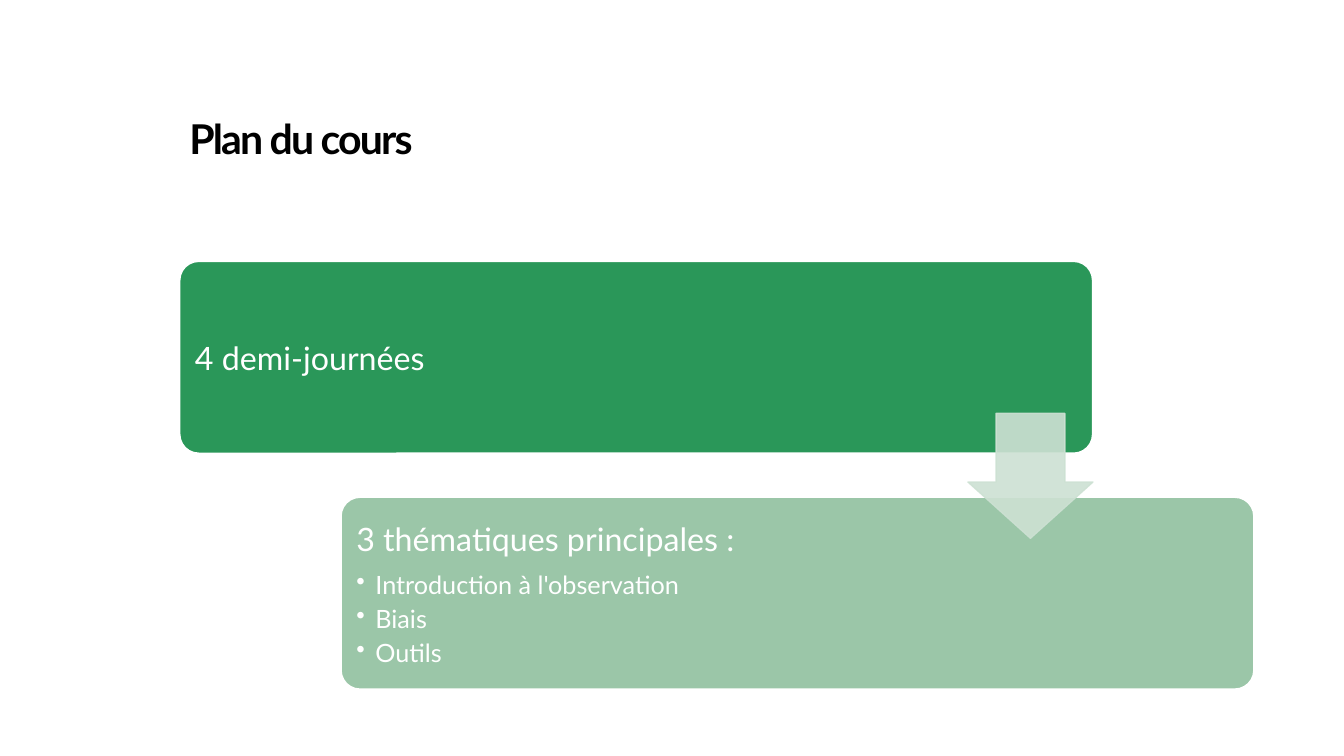
from dataclasses import dataclass

from lxml.etree import SubElement
from pptx import Presentation
from pptx.dml.color import RGBColor
from pptx.enum.shapes import MSO_SHAPE
from pptx.enum.text import MSO_ANCHOR, PP_ALIGN
from pptx.oxml.ns import qn
from pptx.util import Emu, Inches, Pt


@dataclass(frozen=True)
class Theme:
    font: str = "Lato"
    ink: str = "000000"
    paper: str = "FFFFFF"
    steps: tuple = ("2A9759", "9BC6A8")
    arrow: str = "CDE1D3"
    title_size: float = 29.3
    heading_size: float = 23
    topic_size: float = 18


class CourseSlide:
    """Draws course plan elements placed in percent of the slide's size."""

    def __init__(self, deck, theme):
        self.deck = deck
        self.theme = theme
        self.slide = deck.slides.add_slide(deck.slide_layouts[6])

    def area(self, left, top, width, height):
        across, down = self.deck.slide_width, self.deck.slide_height
        return [Emu(round(share * side / 100)) for share, side in
                ((left, across), (top, down), (width, across), (height, down))]

    def apply(self, target, values):
        for name, value in values.items():
            setattr(target, name, value)

    def add_words(self, paragraph, words, size, color, after=0, bold=False):
        self.apply(paragraph, {"alignment": PP_ALIGN.LEFT, "space_after": Pt(after)})
        run = paragraph.add_run()
        run.text = words
        self.apply(run.font, {"name": self.theme.font, "size": Pt(size), "bold": bold})
        run.font.color.rgb = RGBColor.from_string(color)
        return run

    def bullet(self, paragraph, indent):
        properties = paragraph._p.get_or_add_pPr()
        properties.set("marL", str(indent))
        properties.set("indent", str(-indent))
        SubElement(properties, qn("a:buChar"), char="•")

    def title(self, words, area):
        frame = self.slide.shapes.add_textbox(*self.area(*area)).text_frame
        frame.word_wrap = True
        run = self.add_words(frame.paragraphs[0], words, self.theme.title_size,
                             self.theme.ink, bold=True)
        run.font._element.set("spc", "-130")

    def block(self, kind, area, adjustments, fill, outline, weight):
        shape = self.slide.shapes.add_shape(kind, *self.area(*area))
        shape.shadow.inherit = False
        for place, value in enumerate(adjustments):
            shape.adjustments[place] = value
        shape.fill.solid()
        shape.fill.fore_color.rgb = RGBColor.from_string(fill)
        shape.line.color.rgb = RGBColor.from_string(outline)
        shape.line.width = Pt(weight)
        return shape

    def step(self, heading, topics, area, fill):
        theme = self.theme
        card = self.block(MSO_SHAPE.ROUNDED_RECTANGLE, area, [0.1], fill, theme.paper, 1.5)
        frame = card.text_frame
        margins = dict.fromkeys(
            ("margin_left", "margin_right", "margin_top", "margin_bottom"), Inches(0.1))
        self.apply(frame, {"word_wrap": True, "vertical_anchor": MSO_ANCHOR.MIDDLE, **margins})
        self.add_words(frame.paragraphs[0], heading, theme.heading_size, theme.paper,
                       after=0.35 * theme.heading_size)
        for topic in topics:
            paragraph = frame.add_paragraph()
            paragraph.level = 1
            self.add_words(paragraph, topic, theme.topic_size, theme.paper,
                           after=0.15 * theme.topic_size)
            self.bullet(paragraph, Inches(0.19))

    def arrow(self, area, opacity):
        tint = self.theme.arrow
        arrow = self.block(MSO_SHAPE.DOWN_ARROW, area, [0.55, 0.45], tint, tint, 1)
        for color in arrow._element.spPr.iter(qn("a:srgbClr")):
            SubElement(color, qn("a:alpha"), val=str(opacity * 1000))


def main():
    deck = Presentation()
    deck.slide_width, deck.slide_height = Inches(13.33), Inches(7.5)
    theme = Theme()
    plan = CourseSlide(deck, theme)
    left, top, step_right, step_down = 13.35, 34.53, 12, 31.2
    plan.title("Plan du cours", (left, 14.4, 79.9, 13.87))
    stages = [
        ("4 demi-journées", []),
        ("3 thématiques principales :", ["Introduction à l'observation", "Biais", "Outils"]),
    ]
    for order, (heading, topics) in enumerate(stages):
        area = (left + order * step_right, top + order * step_down, 67.97, 25.47)
        plan.step(heading, topics, area, theme.steps[order])
    plan.arrow((72.02, 54.67, 9.3, 16.53), opacity=90)
    deck.save("out.pptx")


if __name__ == "__main__":
    main()
